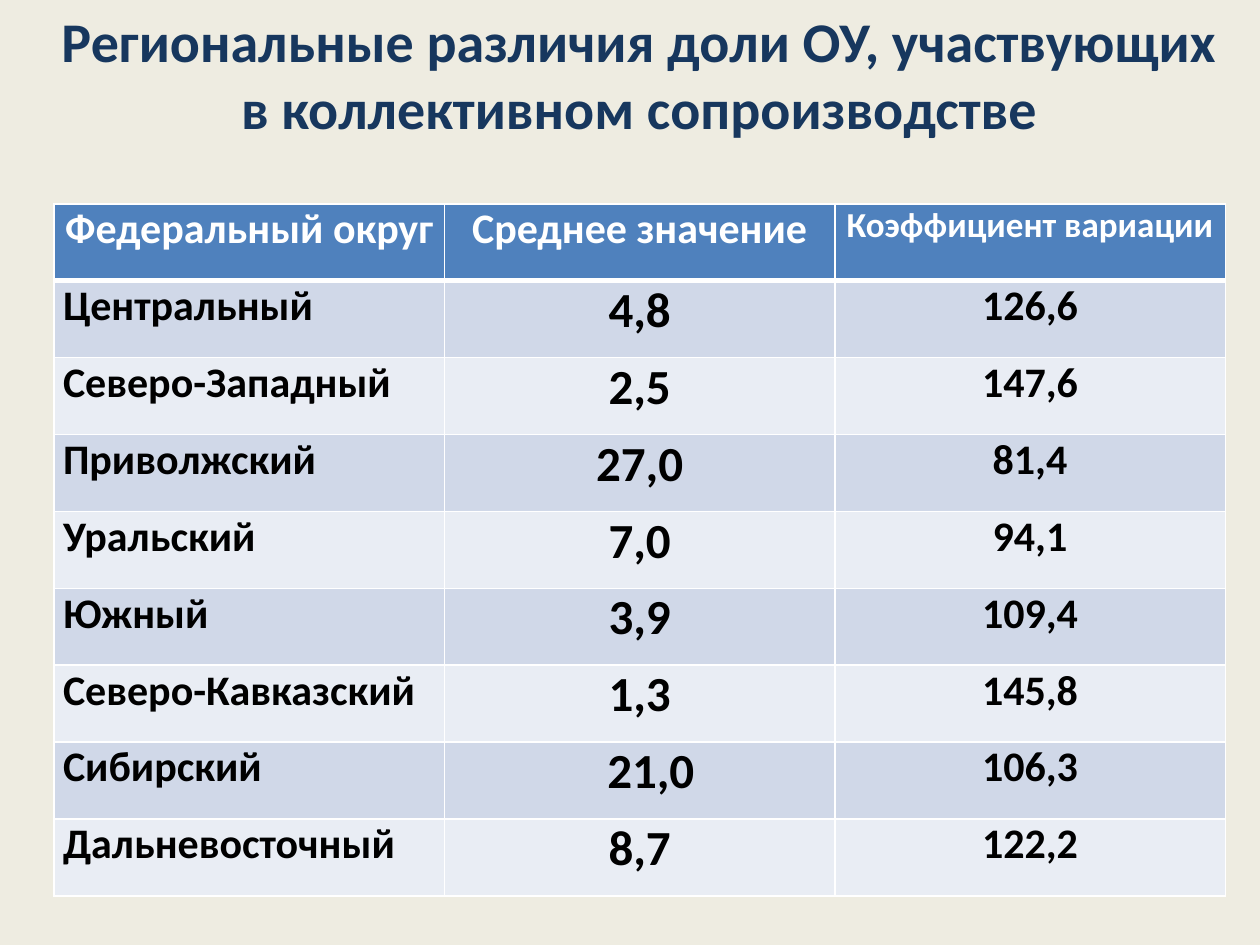
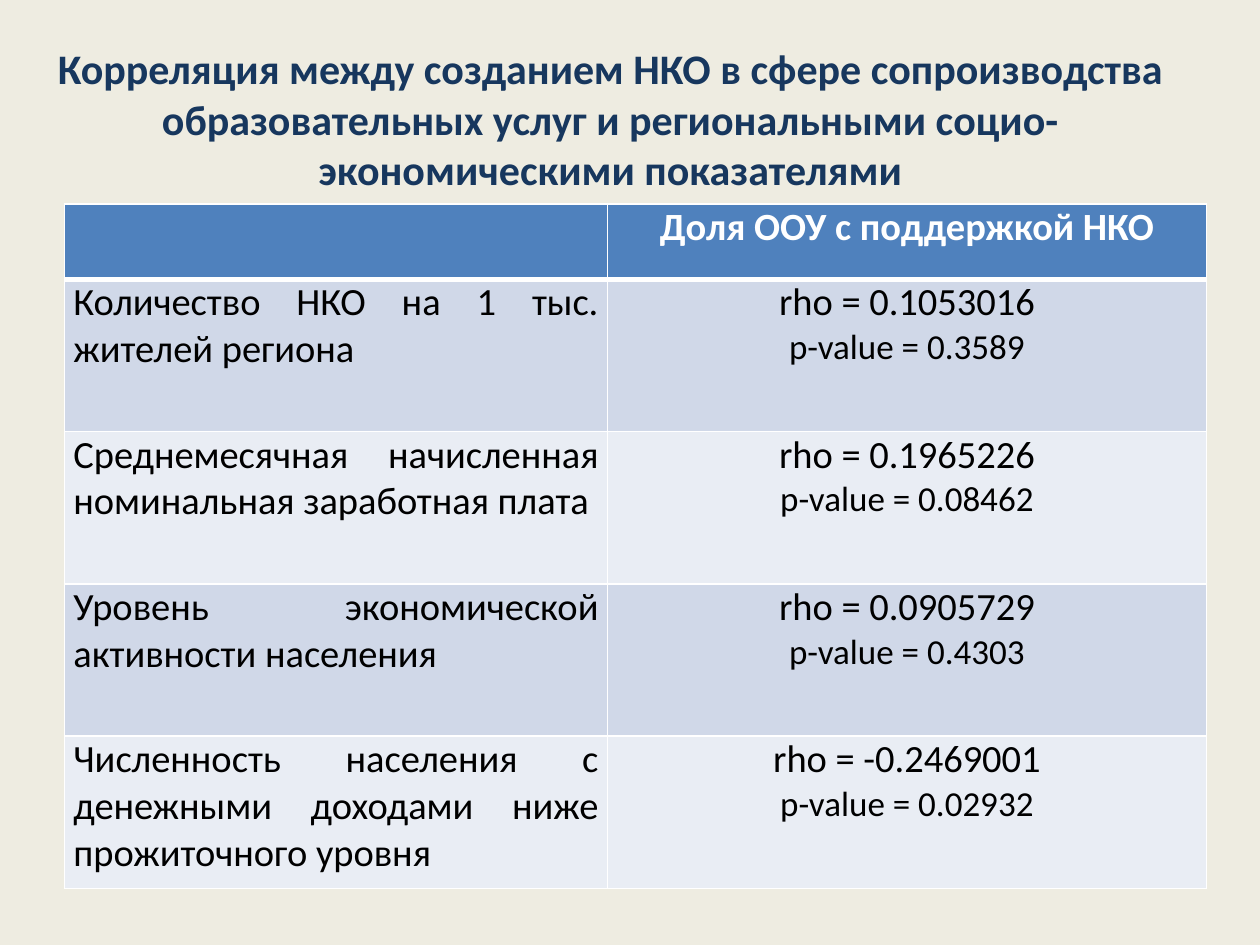
from dataclasses import dataclass

import pptx
import pptx.dml.color
import pptx.enum.text
import pptx.oxml
import pptx.oxml.ns
import pptx.slide
import pptx.table
import pptx.util
from pptx.util import Cm

ALIGN = pptx.enum.text.PP_ALIGN
FONT = "Calibri"
COLORS = {
    "background": "EEECE1",
    "title": "17375E",
    "header": "4F81BD",
    "odd_row": "D0D8E8",
    "even_row": "E9EDF4",
    "border": "FFFFFF",
    "header_text": "FFFFFF",
    "text": "000000",
}
TABLE_TOP = Cm(4.11)
CELL_MARGIN = Cm(0.18)
THIN, THICK = 1, 3


@dataclass
class Title:
    text: str
    left: float
    top: float
    width: float
    height: float
    size: int


@dataclass
class Column:
    """A table column; line_sizes holds one size per paragraph of a body cell."""
    header: str
    width: float
    header_size: int
    line_sizes: tuple[int, ...]
    align: ALIGN = ALIGN.CENTER


@dataclass
class TableSpec:
    left: float
    header_height: float
    row_height: float
    bold: bool
    columns: list[Column]
    rows: list[tuple[str, ...]]


def rgb(name: str) -> pptx.dml.color.RGBColor:
    return pptx.dml.color.RGBColor.from_string(COLORS[name])


def write(tf, text: str, sizes: tuple[int, ...], color: str, bold: bool, align: ALIGN) -> None:
    tf.text = text
    for p, size in zip(tf.paragraphs, sizes):
        p.alignment = align
        for r in p.runs:
            r.font.name = FONT
            r.font.size = pptx.util.Pt(size)
            r.font.bold = bold
            r.font.color.rgb = rgb(color)


def set_borders(cell: pptx.table._Cell, top: int, bottom: int) -> None:
    tc_pr = cell._tc.get_or_add_tcPr()
    widths = {"lnL": THIN, "lnR": THIN, "lnT": top, "lnB": bottom}
    for i, (tag, width) in enumerate(widths.items()):
        line = pptx.oxml.parse_xml(
            f'<a:{tag} {pptx.oxml.ns.nsdecls("a")} w="{pptx.util.Pt(width)}">'
            f'<a:solidFill><a:srgbClr val="{COLORS["border"]}"/></a:solidFill></a:{tag}>'
        )
        tc_pr.insert(i, line)


def add_title(slide: pptx.slide.Slide, title: Title) -> None:
    sp = slide.shapes.add_textbox(
        Cm(title.left), Cm(title.top), Cm(title.width), Cm(title.height))
    tf = sp.text_frame
    tf.word_wrap = True
    write(tf, title.text, (title.size,), "title", True, ALIGN.CENTER)


def add_table(slide: pptx.slide.Slide, spec: TableSpec) -> pptx.table.Table:
    width = sum(column.width for column in spec.columns)
    height = spec.header_height + spec.row_height * len(spec.rows)
    table = slide.shapes.add_table(
        len(spec.rows) + 1, len(spec.columns),
        Cm(spec.left), TABLE_TOP, Cm(width), Cm(height)).table
    for i, row in enumerate(table.rows):
        row.height = Cm(spec.row_height if i else spec.header_height)
    for j, column in enumerate(spec.columns):
        table.columns[j].width = Cm(column.width)
        texts = [column.header] + [row[j] for row in spec.rows]
        for i, text in enumerate(texts):
            cell = table.cell(i, j)
            cell.margin_left = cell.margin_right = CELL_MARGIN
            cell.margin_top = cell.margin_bottom = 0
            cell.fill.solid()
            if i == 0:
                fill = "header"
                write(cell.text_frame, text, (column.header_size,),
                      "header_text", True, ALIGN.CENTER)
            else:
                fill = "odd_row" if i % 2 else "even_row"
                write(cell.text_frame, text, column.line_sizes,
                      "text", spec.bold, column.align)
            cell.fill.fore_color.rgb = rgb(fill)
            set_borders(cell, THICK if i == 1 else THIN, THICK if i == 0 else THIN)
    return table


def add_table_slide(prs, title: Title, spec: TableSpec) -> pptx.table.Table:
    slide = prs.slides.add_slide(prs.slide_layouts[6])
    slide.background.fill.solid()
    slide.background.fill.fore_color.rgb = rgb("background")
    table = add_table(slide, spec)
    add_title(slide, title)
    return table


DISTRICT_TITLE = Title(
    "Региональные различия доли ОУ, участвующих в коллективном сопроизводстве",
    0.89, 0, 24, 3, 32)
DISTRICTS = TableSpec(
    left=1.09, header_height=1.55, row_height=1.55, bold=True,
    columns=[
        Column("Федеральный округ", 7.87, 24, (24,), ALIGN.JUSTIFY),
        Column("Среднее значение", 7.87, 24, (28,)),
        Column("Коэффициент вариации", 7.87, 20, (24,)),
    ],
    rows=[
        ("Центральный", "4,8", "126,6"),
        ("Северо-Западный", "2,5", "147,6"),
        ("Приволжский", "27,0", "81,4"),
        ("Уральский", "7,0", "94,1"),
        ("Южный", "3,9", "109,4"),
        ("Северо-Кавказский", "1,3", "145,8"),
        ("Сибирский", "21,0", "106,3"),
        ("Дальневосточный", "8,7", "122,2"),
    ],
)
SIBERIAN_ROW, MEAN_COLUMN = 7, 1

CORRELATION_TITLE = Title(
    "Корреляция между созданием НКО в сфере сопроизводства образовательных услуг "
    "и региональными социо-экономическими показателями",
    0.71, 0.74, 23.19, 4.37, 24)
CORRELATIONS = TableSpec(
    left=1.3, header_height=1.52, row_height=3.07, bold=False,
    columns=[
        Column("", 10.95, 22, (22,), ALIGN.JUSTIFY),
        Column("Доля ООУ с поддержкой НКО", 12.07, 22, (22, 20)),
    ],
    rows=[
        (factor, f"rho = {rho}\np-value = {p_value}")
        for factor, rho, p_value in [
            ("Количество НКО на 1 тыс. жителей региона", "0.1053016", "0.3589"),
            ("Среднемесячная начисленная номинальная заработная плата",
             "0.1965226", "0.08462"),
            ("Уровень экономической активности населения", "0.0905729", "0.4303"),
            ("Численность населения с денежными доходами ниже прожиточного уровня",
             "-0.2469001", "0.02932"),
        ]
    ],
)


def main() -> None:
    prs = pptx.Presentation()
    prs.slide_width, prs.slide_height = Cm(25.4), Cm(19.05)
    districts = add_table_slide(prs, DISTRICT_TITLE, DISTRICTS)
    # The Siberian mean sits slightly right of the column's centre.
    districts.cell(SIBERIAN_ROW, MEAN_COLUMN).margin_left = CELL_MARGIN + Cm(0.45)
    add_table_slide(prs, CORRELATION_TITLE, CORRELATIONS)
    prs.save("out.pptx")


if __name__ == "__main__":
    main()
